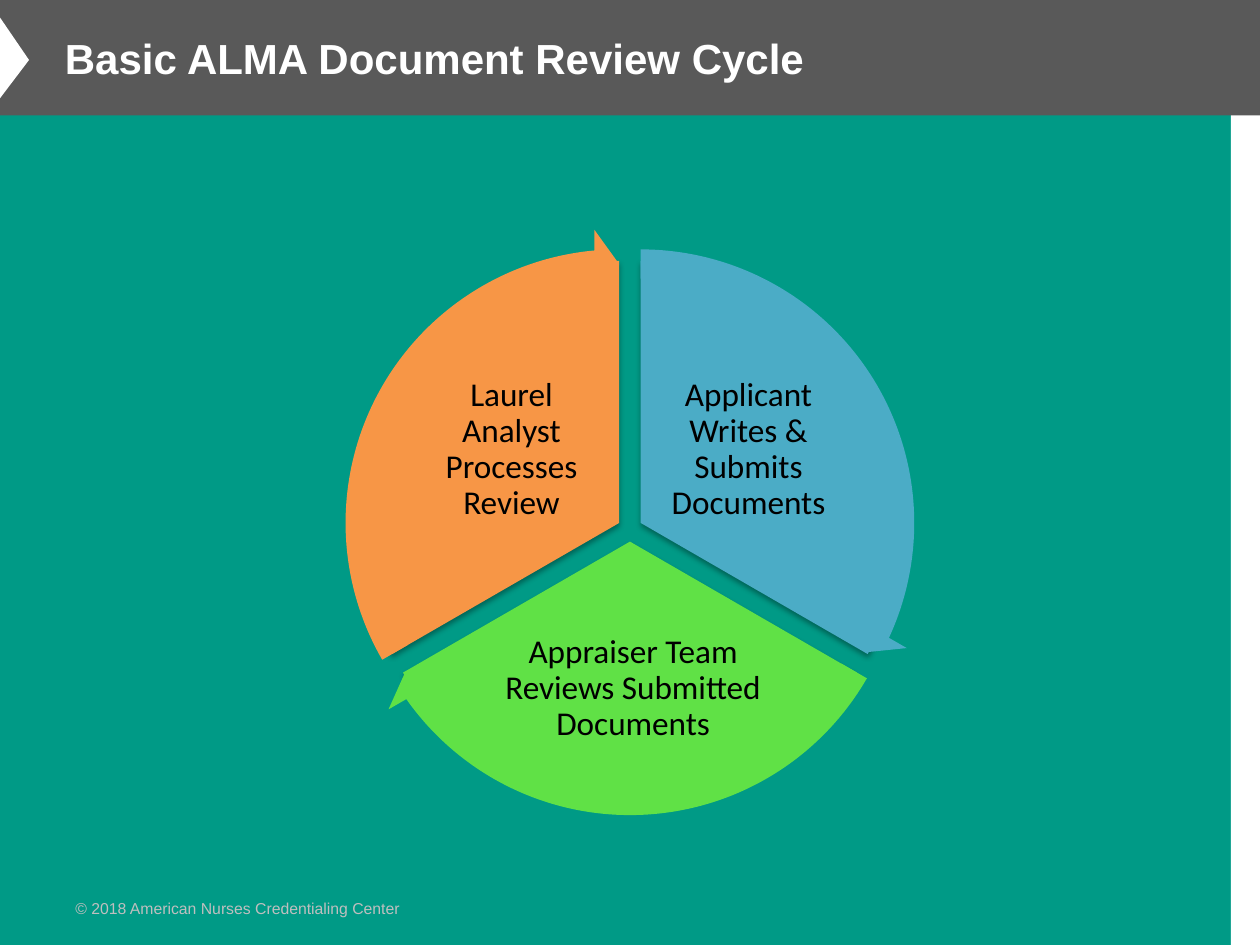
import math

import lxml.etree
import pptx
import pptx.dml.color
import pptx.enum.shapes
import pptx.enum.text
import pptx.oxml.ns
import pptx.util

Pt = pptx.util.Pt
SHAPES = pptx.enum.shapes.MSO_SHAPE
ANCHOR = pptx.enum.text.MSO_ANCHOR
ALIGN = pptx.enum.text.PP_ALIGN
qn = pptx.oxml.ns.qn

COLORS = {
    "teal": "009A86",
    "white": "FFFFFF",
    "black": "000000",
    "header": "595959",
    "footer": "BFBFBF",
    "blue": "4BACC6",
    "green": "60E146",
    "orange": "F79646",
}


def paint(shape, color):
    """Give a shape a flat fill with no line and no shadow."""
    shape.shadow.inherit = False
    shape.fill.solid()
    shape.fill.fore_color.rgb = pptx.dml.color.RGBColor.from_string(COLORS[color])
    shape.line.fill.background()


def add_text(box, text, font, size, color, anchor, bold=False):
    """Add a wrapping text box with one run; box is left, top, width, height."""
    textbox = slide.shapes.add_textbox(*map(Pt, box))
    frame = textbox.text_frame
    frame.word_wrap = True
    frame.vertical_anchor = anchor
    run = frame.paragraphs[0].add_run()
    run.text = text
    run.font.name = font
    run.font.size = Pt(size)
    run.font.bold = bold
    run.font.color.rgb = pptx.dml.color.RGBColor.from_string(COLORS[color])
    return frame


prs = pptx.Presentation()
prs.slide_width, prs.slide_height = Pt(720), Pt(540)
slide = prs.slides.add_slide(prs.slide_layouts[6])
slide.background.fill.solid()
slide.background.fill.fore_color.rgb = pptx.dml.color.RGBColor.from_string(COLORS["teal"])

# Frame: right strip, header bar and its notch
for box, color in [((703.4, 57.6, 16.6, 482.4), "white"), ((0, 0, 720, 66), "header")]:
    band = slide.shapes.add_shape(SHAPES.RECTANGLE, *map(Pt, box))
    paint(band, color)

outline = slide.shapes.build_freeform(Pt(0), Pt(10), scale=1.0)
outline.add_line_segments([(Pt(16.6), Pt(34.3)), (Pt(0), Pt(56.2))], close=True)
notch = outline.convert_to_shape()
paint(notch, "white")

footer = add_text((36, 509.8, 202.3, 18), "© 2018 American Nurses Credentialing Center",
                  "Arial", 9, "footer", ANCHOR.BOTTOM)
footer.word_wrap = False
footer.auto_size = pptx.enum.text.MSO_AUTO_SIZE.SHAPE_TO_FIT_TEXT

# Cycle: three sectors pushed outward from a common centre, clockwise from the top
# Angles in adjustments are in units of 5/3 degree, so 216 is a full turn
CENTER_X, CENTER_Y, PUSH = 360, 302.4, 7.1
PIE_SIZE, ARROW_SIZE = 299.5, 336.2
TURN, THIRD, HEAD_ANGLE = 216, 72, 3.28
steps = [
    ("Applicant Writes & Submits Documents", "blue", (374.4, 212.4, 106.6, 89.3)),
    ("Appraiser Team Reviews Submitted Documents", "green", (281.5, 354.2, 160.6, 78.5)),
    ("Laurel Analyst Processes Review", "orange", (239, 212.4, 106.6, 89.3)),
]
arrows = []
for i, (caption, color, caption_box) in enumerate(steps):
    start = (162 + i * THIRD) % TURN
    end = (start + THIRD) % TURN
    middle = math.radians(-30 + 120 * i)
    x = CENTER_X + PUSH * math.cos(middle)
    y = CENTER_Y + PUSH * math.sin(middle)
    arrows.append((x, y, start, end, color))

    sector = slide.shapes.add_shape(SHAPES.PIE, Pt(x - PIE_SIZE / 2), Pt(y - PIE_SIZE / 2),
                                    Pt(PIE_SIZE), Pt(PIE_SIZE))
    sector.adjustments[0], sector.adjustments[1] = start, end
    paint(sector, color)
    effects = sector._element.spPr.find(qn("a:effectLst"))
    shadow = lxml.etree.SubElement(effects, qn("a:outerShdw"), blurRad="40000",
                                   dist="23000", dir="5400000", rotWithShape="0")
    shade = lxml.etree.SubElement(shadow, qn("a:srgbClr"), val=COLORS["black"])
    lxml.etree.SubElement(shade, qn("a:alpha"), val="35000")

    frame = add_text(caption_box, caption, "Calibri", 19, "black", ANCHOR.MIDDLE)
    frame.margin_left = frame.margin_right = Pt(2)
    frame.margin_top = frame.margin_bottom = Pt(2)
    frame.paragraphs[0].alignment = ALIGN.CENTER
    frame.paragraphs[0].line_spacing = 0.9

for x, y, start, end, color in arrows:
    arrow = slide.shapes.add_shape(SHAPES.CIRCULAR_ARROW, Pt(x - ARROW_SIZE / 2),
                                   Pt(y - ARROW_SIZE / 2), Pt(ARROW_SIZE), Pt(ARROW_SIZE))
    for k, value in enumerate((0.05, HEAD_ANGLE, end - HEAD_ANGLE, start, 0.06)):
        arrow.adjustments[k] = value
    paint(arrow, color)

add_text((30, 0, 540, 66), "Basic ALMA Document Review Cycle",
         "Arial", 24, "white", ANCHOR.MIDDLE, bold=True)

prs.save("out.pptx")
